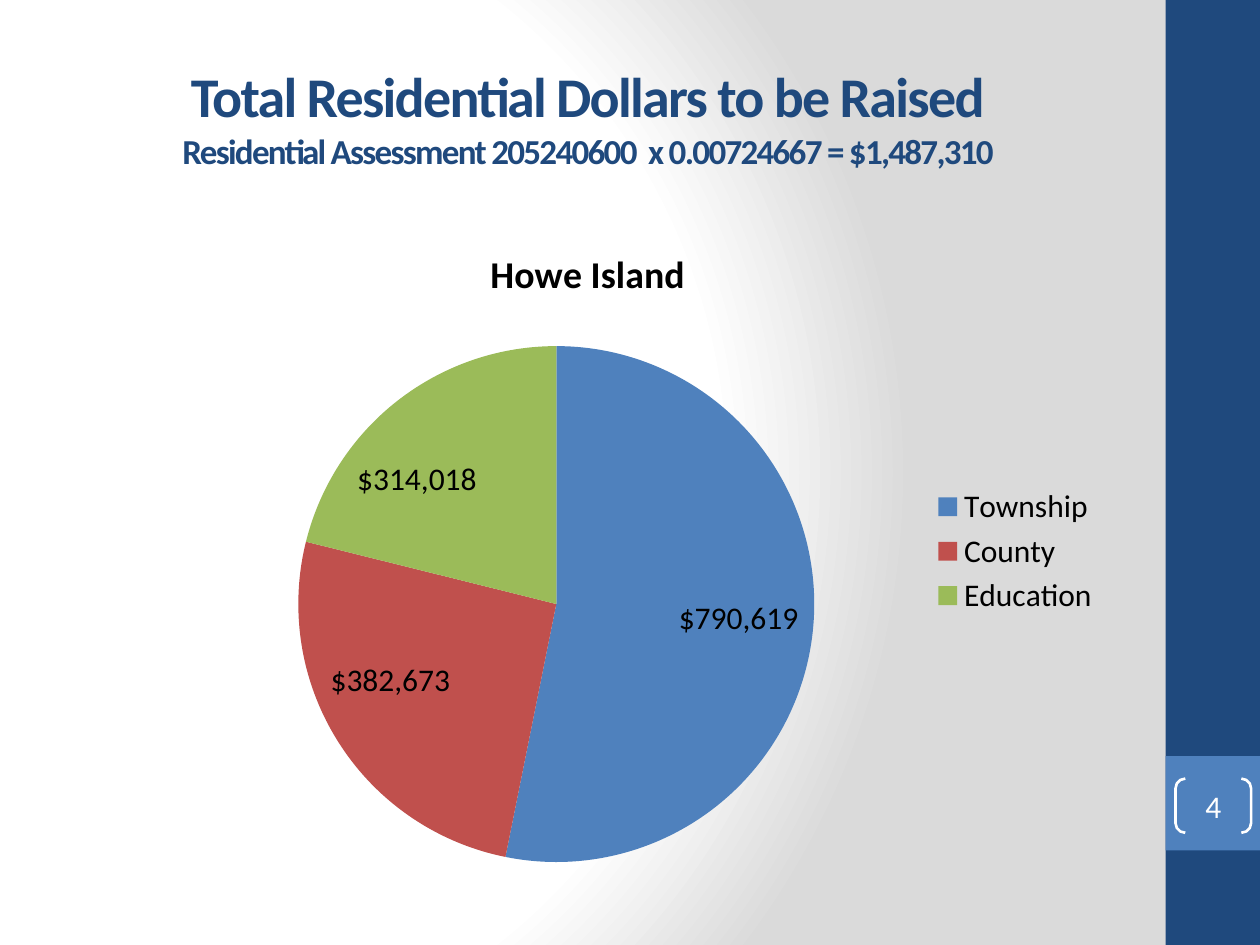
import pptx
import pptx.chart.data
import pptx.dml.color
import pptx.enum.chart
import pptx.enum.shapes
import pptx.enum.text
import pptx.oxml
import pptx.oxml.ns
import pptx.util
from pptx.util import Inches

RGBColor = pptx.dml.color.RGBColor
NAVY = RGBColor(0x1F, 0x49, 0x7D)
BLUE = RGBColor(0x4F, 0x81, 0xBD)
RED = RGBColor(0xC0, 0x50, 0x4D)
GREEN = RGBColor(0x9B, 0xBB, 0x59)
WHITE = RGBColor(0xFF, 0xFF, 0xFF)
BLACK = RGBColor(0, 0, 0)
FONT = "Calibri"
DOLLARS = '"$"#,##0'
NAMESPACES = pptx.oxml.ns.nsdecls("a", "c")
SHARES = [
    ("Township", 790619, BLUE),
    ("County", 382673, RED),
    ("Education", 314018, GREEN),
]


def format_font(font, size=18, color=BLACK, bold=False):
    """Apply the slide's typeface with a size, colour and weight."""
    font.name = FONT
    font.size = pptx.util.Pt(size)
    font.color.rgb = color
    font.bold = bold


def add_text(paragraph, text, spacing=None, **font_format):
    """Append a formatted run, with optional letter spacing in points."""
    run = paragraph.add_run()
    run.text = text
    format_font(run.font, **font_format)
    if spacing is not None:
        run.font._element.set("spc", str(spacing * 100))


def paint_background(slide):
    """Fill the background with a white to grey circular gradient."""
    slide.background.fill.solid()
    properties = slide.element.find(".//" + pptx.oxml.ns.qn("p:bgPr"))
    stops = "".join(
        f'<a:gs pos="{position * 1000}"><a:srgbClr val="{color}"/></a:gs>'
        for position, color in [(0, "FFFFFF"), (75, "FFFFFF"), (100, "DADADA")]
    )
    gradient = pptx.oxml.parse_xml(
        f'<a:gradFill {NAMESPACES} rotWithShape="1"><a:gsLst>{stops}</a:gsLst>'
        '<a:path path="circle"><a:fillToRect l="20000" t="50000" r="100000" b="50000"/>'
        "</a:path></a:gradFill>"
    )
    properties.replace(properties[0], gradient)


def add_block(slide, left, top, width, height, color):
    """Add a plain filled rectangle."""
    block = slide.shapes.add_shape(
        pptx.enum.shapes.MSO_SHAPE.RECTANGLE, left, top, width, height
    )
    block.shadow.inherit = False
    block.fill.solid()
    block.fill.fore_color.rgb = color
    block.line.fill.background()


def add_sidebar(slide, left, top, width, height):
    """Add the side band with its bracketed slide number."""
    add_block(slide, left, top, width, height, NAVY)
    add_block(slide, left, top + Inches(6), width, width, BLUE)
    number = slide.shapes.add_shape(
        pptx.enum.shapes.MSO_SHAPE.DOUBLE_BRACKET,
        left + Inches(0.08), top + Inches(6.18), Inches(0.6), Inches(0.43),
    )
    number.adjustments[0] = 0.18
    number.shadow.inherit = False
    number.fill.background()
    number.line.color.rgb = WHITE
    number.line.width = pptx.util.Pt(1.5)
    frame = number.text_frame
    frame.margin_left = frame.margin_right = frame.margin_top = frame.margin_bottom = 0
    frame.vertical_anchor = pptx.enum.text.MSO_ANCHOR.MIDDLE
    frame.paragraphs[0].alignment = pptx.enum.text.PP_ALIGN.CENTER
    add_text(frame.paragraphs[0], "4", color=WHITE)


def fill_title(slide, left, top, width, height):
    """Place the two-line heading in the title placeholder."""
    title = slide.shapes.title
    title.left, title.top, title.width, title.height = left, top, width, height
    title.text_frame.vertical_anchor = pptx.enum.text.MSO_ANCHOR.MIDDLE
    heading = title.text_frame.paragraphs[0]
    heading.alignment = pptx.enum.text.PP_ALIGN.CENTER
    add_text(heading, "Total Residential Dollars to be Raised",
             spacing=-1, size=32, color=NAVY, bold=True)
    heading.add_line_break()
    add_text(heading, "Residential Assessment 205240600  x 0.00724667 = $1,487,310",
             spacing=-1, size=20, color=NAVY, bold=True)


def add_tax_pie(slide, left, top, width, height):
    """Add the pie of dollars raised by each tax share."""
    data = pptx.chart.data.CategoryChartData(number_format=DOLLARS)
    data.categories = [name for name, *_ in SHARES]
    data.add_series("Howe Island", [dollars for _, dollars, _ in SHARES])
    chart = slide.shapes.add_chart(
        pptx.enum.chart.XL_CHART_TYPE.PIE, left, top, width, height, data
    ).chart
    format_font(chart.font)
    chart.has_title = True
    add_text(chart.chart_title.text_frame.paragraphs[0], "Howe Island",
             size=21.6, bold=True)
    chart.chart_title.include_in_layout = False
    chart.has_legend = True
    chart.legend.position = pptx.enum.chart.XL_LEGEND_POSITION.RIGHT
    chart.legend.include_in_layout = False
    format_font(chart.legend.font)

    pie = chart.plots[0]
    pie.vary_by_categories = True
    best_fit = pptx.enum.chart.XL_LABEL_POSITION.BEST_FIT
    labels = pie.series[0].data_labels
    labels.show_value = True
    labels.show_percentage = False
    labels.number_format = DOLLARS
    labels.number_format_is_linked = False
    labels.position = best_fit
    for index, (_, dollars, color) in enumerate(SHARES):
        point = pie.series[0].points[index]
        point.format.fill.solid()
        point.format.fill.fore_color.rgb = color
        add_text(point.data_label.text_frame.paragraphs[0], f" ${dollars:,} ")
        point.data_label.position = best_fit

    plot_area = chart._chartSpace.find(".//" + pptx.oxml.ns.qn("c:plotArea"))
    for old_layout in plot_area.findall(pptx.oxml.ns.qn("c:layout")):
        plot_area.remove(old_layout)
    bounds = "".join(
        f'<c:{tag} val="{value}"/>'
        for tag, value in [("layoutTarget", "inner"), ("xMode", "edge"), ("yMode", "edge"),
                           ("x", 0.22), ("y", 0.19), ("w", 0.5), ("h", 0.78)]
    )
    plot_area.insert(0, pptx.oxml.parse_xml(
        f"<c:layout {NAMESPACES}><c:manualLayout>{bounds}</c:manualLayout></c:layout>"
    ))


def main():
    """Build and save the slide."""
    deck = pptx.Presentation()
    deck.slide_width, deck.slide_height = Inches(10), Inches(7.5)
    slide = deck.slides.add_slide(deck.slide_layouts[5])
    paint_background(slide)
    add_sidebar(slide, Inches(9.25), 0, Inches(0.75), Inches(7.5))
    fill_title(slide, Inches(0.5), Inches(0.3), Inches(8.33), Inches(1.25))
    add_tax_pie(slide, Inches(0.5), Inches(1.75), Inches(8.33), Inches(5.25))
    deck.save("out.pptx")


if __name__ == "__main__":
    main()
